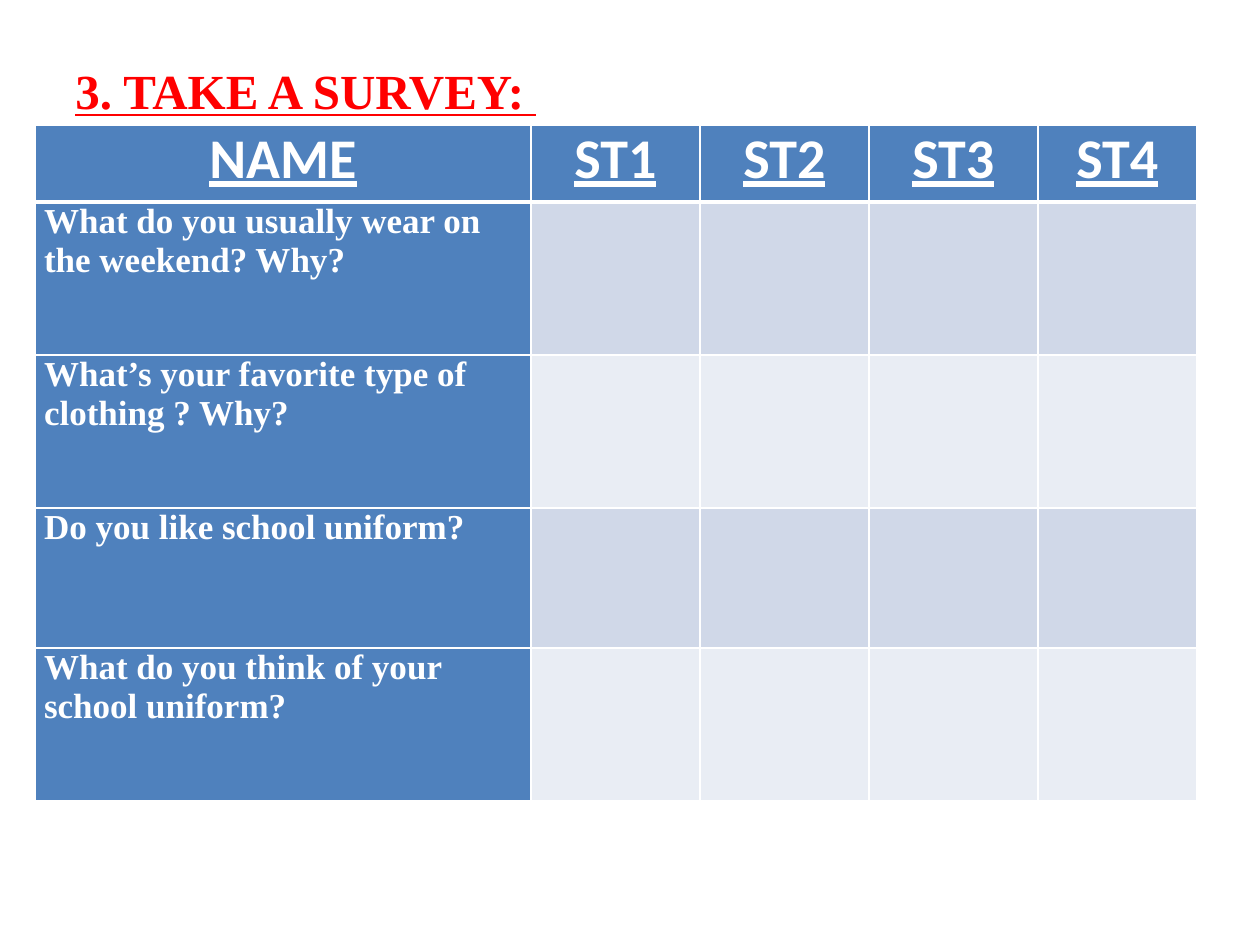
"""Build a class survey slide with a heading and a question table."""
from lxml.etree import SubElement
from pptx import Presentation
from pptx.dml.color import RGBColor
from pptx.enum.text import MSO_ANCHOR, PP_ALIGN
from pptx.oxml.ns import qn
from pptx.util import Emu, Pt

TITLE = "3. TAKE A SURVEY: "
HEADERS = ["NAME", "ST1", "ST2", "ST3", "ST4"]
QUESTIONS = [
    "What do you usually wear on the weekend? Why?",
    "What’s your favorite type of clothing ? Why?",
    "Do you like school uniform?",
    "What do you think of your school uniform?",
]
COLS = [496, 169, 169, 169, 159]
ROWS = [77, 153, 153, 140, 153]
BLUE, WHITE, RED = "4F81BD", "FFFFFF", "FF0000"
BANDS = ["D0D8E8", "E9EDF4"]


def px(n):
    return Emu(round(n * 914400 / 126))


def rgb(value):
    return RGBColor.from_string(value)


def write(tf, text, font, size, color, underline=False, align=PP_ALIGN.LEFT):
    tf.text = text
    p = tf.paragraphs[0]
    p.alignment = align
    f = p.runs[0].font
    f.name, f.size, f.bold, f.underline = font, Pt(size), True, underline
    f.color.rgb = rgb(color)


def border(cell, widths):
    for side, width in widths.items():
        ln = SubElement(cell._tc.get_or_add_tcPr(), qn(f"a:ln{side}"), w=str(Pt(width)))
        SubElement(SubElement(ln, qn("a:solidFill")), qn("a:srgbClr"), val=WHITE)


def add_title(s):
    tf = s.shapes.add_textbox(px(63), px(50), px(1134), px(80)).text_frame
    tf.word_wrap = True
    tf.vertical_anchor = MSO_ANCHOR.MIDDLE
    write(tf, TITLE, "Times New Roman", 28, RED, underline=True)


def add_survey(s):
    shape = s.shapes.add_table(len(ROWS), len(COLS), px(35), px(125),
                               px(sum(COLS)), px(sum(ROWS)))
    table = shape.table
    for col, width in zip(table.columns, COLS):
        col.width = px(width)
    for row, height in zip(table.rows, ROWS):
        row.height = px(height)
    texts = [HEADERS] + [[q] + [""] * (len(COLS) - 1) for q in QUESTIONS]
    for i, line in enumerate(texts):
        for j, text in enumerate(line):
            cell = table.cell(i, j)
            cell.margin_left = cell.margin_right = px(9)
            cell.margin_top = cell.margin_bottom = 0
            border(cell, {"L": 1, "R": 1, "T": 3 if i == 1 else 1, "B": 1 if i else 3})
            cell.fill.solid()
            cell.fill.fore_color.rgb = rgb(BANDS[(i - 1) % 2] if i and j else BLUE)
            if i == 0:
                write(cell.text_frame, text, "Calibri", 32, WHITE, True, PP_ALIGN.CENTER)
            elif text:
                write(cell.text_frame, text, "Times New Roman", 20, WHITE)


def main():
    prs = Presentation()
    prs.slide_width, prs.slide_height = px(1260), px(945)
    s = prs.slides.add_slide(prs.slide_layouts[6])
    add_title(s)
    add_survey(s)
    prs.save("out.pptx")


if __name__ == "__main__":
    main()
